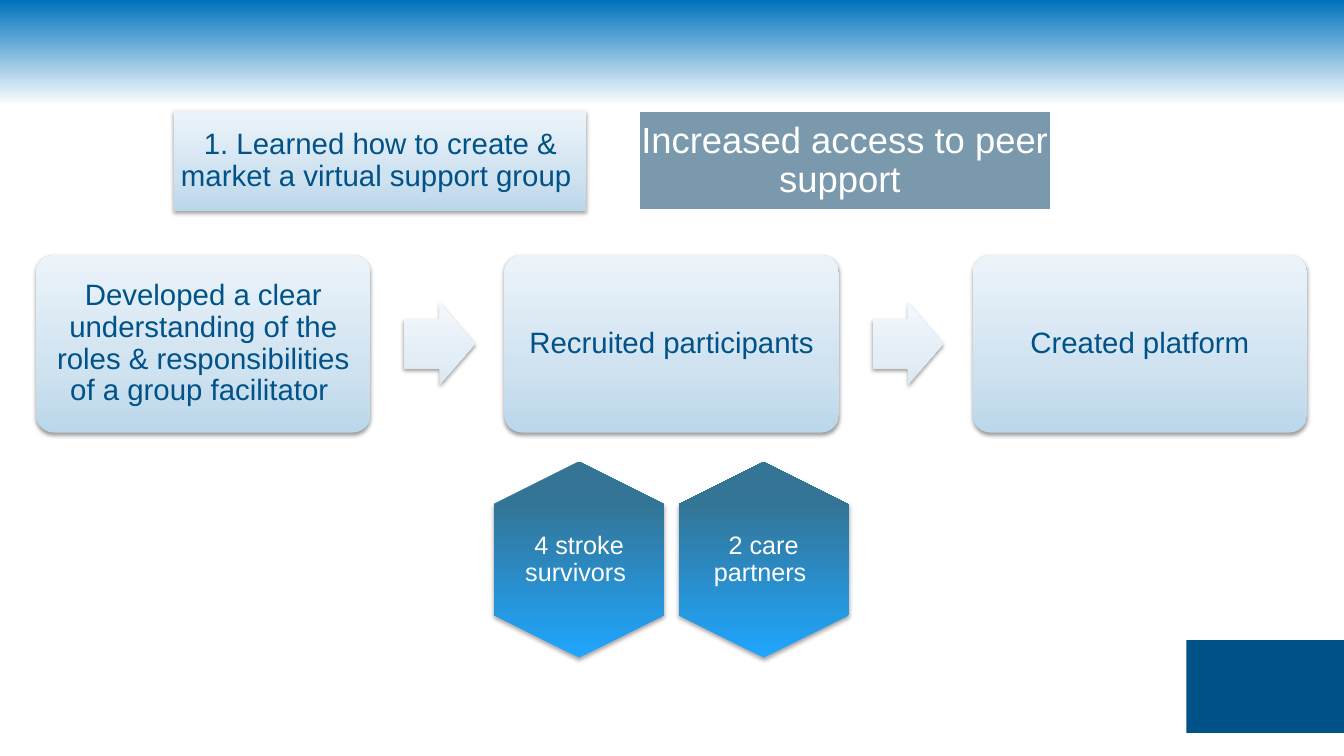
from dataclasses import dataclass

from lxml.etree import SubElement
from pptx import Presentation
from pptx.dml.color import RGBColor
from pptx.enum.shapes import MSO_SHAPE
from pptx.enum.text import MSO_ANCHOR, PP_ALIGN
from pptx.oxml.ns import qn
from pptx.util import Cm, Pt


@dataclass(frozen=True)
class Theme:
    """Colours, gradients, shadows and type sizes of the slide."""
    font: str = "Arial"
    navy: str = "005288"
    slate: str = "7A99AC"
    white: str = "FFFFFF"
    sky: tuple = ((0, "0072BC"), (14, "FFFFFF"))
    pale: tuple = ((0, "BBD7EA"), (35, "CFE2F0"), (100, "ECF4FA"))
    mist: tuple = ((0, "D9E8F2"), (35, "E4EEF6"), (100, "F4F8FC"))
    ocean: tuple = ((0, "1FA6FF"), (80, "347494"), (100, "327596"))
    heading_size: int = 26
    step_size: int = 21
    group_size: int = 18
    soft_shadow: int = 38
    hexagon_shadow: int = 35


THEME = Theme()


def paint_gradient(fill, element, stops, angle):
    """Fill with colour stops given as percent and colour."""
    fill.gradient()
    fill.gradient_angle = angle
    gradient = next(element.iter(qn("a:gradFill")))
    gradient.set("rotWithShape", "0")
    stop_list = gradient.find(qn("a:gsLst"))
    for old_stop in list(stop_list):
        stop_list.remove(old_stop)
    for percent, colour in stops:
        stop = SubElement(stop_list, qn("a:gs"), pos=str(percent * 1000))
        SubElement(stop, qn("a:srgbClr"), val=colour)


def cast_shadow(shape, opacity):
    """Drop a small shadow straight below the shape."""
    effects = shape._element.spPr.find(qn("a:effectLst"))
    shadow = SubElement(effects, qn("a:outerShdw"), blurRad=str(Pt(3.1)),
                        dist=str(Pt(1.6)), dir="5400000", rotWithShape="0")
    colour = SubElement(shadow, qn("a:srgbClr"), val="000000")
    SubElement(colour, qn("a:alpha"), val=str(opacity * 1000))


def draw(slide, preset, box, fill, shadow=None, adjustments=()):
    """Add a borderless preset shape with a solid or gradient fill."""
    shape = slide.shapes.add_shape(preset, *(Cm(length) for length in box))
    shape.shadow.inherit = False
    shape.line.fill.background()
    for index, value in enumerate(adjustments):
        shape.adjustments[index] = value
    if isinstance(fill, str):
        shape.fill.solid()
        shape.fill.fore_color.rgb = RGBColor.from_string(fill)
    else:
        paint_gradient(shape.fill, shape._element, fill, 90)
    if shadow:
        cast_shadow(shape, shadow)
    return shape


def write(shape, wording, size, colour, inset):
    """Set centred, wrapped text in a shape or text box."""
    frame = shape.text_frame
    margins = dict.fromkeys(
        ("margin_left", "margin_top", "margin_right", "margin_bottom"), Cm(inset))
    paragraph = frame.paragraphs[0]
    paragraph.text = wording
    formats = (
        (frame, {"word_wrap": True, "vertical_anchor": MSO_ANCHOR.MIDDLE, **margins}),
        (paragraph, {"alignment": PP_ALIGN.CENTER, "line_spacing": 0.9}),
        (paragraph.font, {"name": THEME.font, "size": Pt(size)}),
        (paragraph.font.color, {"rgb": RGBColor.from_string(colour)}),
    )
    for target, values in formats:
        for attribute, value in values.items():
            setattr(target, attribute, value)


def add_headings(slide, box):
    """Place the numbered lesson and its outcome side by side in the box."""
    left, top, width, height = box
    heading_width = 10.39
    lesson = draw(slide, MSO_SHAPE.RECTANGLE, (left, top, heading_width, height),
                  THEME.pale, THEME.soft_shadow)
    write(lesson, "1. Learned how to create & market a virtual support group ",
          THEME.step_size, THEME.navy, 0.03)
    outcome = draw(slide, MSO_SHAPE.RECTANGLE,
                   (left + width - heading_width, top, heading_width, height), THEME.slate)
    outcome.line.color.rgb = RGBColor.from_string(THEME.white)
    outcome.line.width = Pt(2)
    write(outcome, "Increased access to peer support ",
          THEME.heading_size, THEME.white, 0.03)


def add_steps(slide, box, steps):
    """Spread step cards over the box with an arrow in each gap."""
    left, top, width, height = box
    card_width, arrow_width, arrow_height, arrow_gap = 8.43, 1.78, 2.08, 0.85
    pitch = (width - card_width) / (len(steps) - 1)
    for index, step in enumerate(steps):
        card_left = left + index * pitch
        if index:
            draw(slide, MSO_SHAPE.RIGHT_ARROW,
                 (card_left - pitch + card_width + arrow_gap,
                  top + (height - arrow_height) / 2, arrow_width, arrow_height),
                 THEME.mist, THEME.soft_shadow, (0.6, 0.5))
        card = draw(slide, MSO_SHAPE.ROUNDED_RECTANGLE, (card_left, top, card_width, height),
                    THEME.pale, THEME.soft_shadow, (0.1,))
        write(card, step, THEME.step_size, THEME.navy, 0.36)


def add_participants(slide, box, groups):
    """Stand one upright hexagon per participant group in the box."""
    left, top, width, height = box
    hexagon_width, label_width, label_height = 4.29, 2.95, 3.4
    pitch = (width - hexagon_width) / (len(groups) - 1)
    middle = top + height / 2
    for index, group in enumerate(groups):
        centre = left + hexagon_width / 2 + index * pitch
        hexagon = draw(slide, MSO_SHAPE.HEXAGON,
                       (centre - height / 2, middle - hexagon_width / 2,
                        height, hexagon_width),
                       THEME.ocean, THEME.hexagon_shadow)
        hexagon.rotation = 90
        label = slide.shapes.add_textbox(
            Cm(centre - label_width / 2), Cm(middle - label_height / 2),
            Cm(label_width), Cm(label_height))
        write(label, group, THEME.group_size, THEME.white, 0)


def add_backdrop(slide, corner_box):
    """Paint the sky background and the navy corner block."""
    paint_gradient(slide.background.fill, slide._element, THEME.sky, 270)
    draw(slide, MSO_SHAPE.RECTANGLE, corner_box, THEME.navy)


def main():
    """Build the slide and save it."""
    deck = Presentation()
    deck.slide_width, deck.slide_height = Cm(33.87), Cm(19.05)
    slide = deck.slides.add_slide(deck.slide_layouts[6])
    add_backdrop(slide, (29.9, 16.13, 3.97, 2.34))
    add_headings(slide, (4.39, 2.8, 22.1, 2.51))
    add_participants(slide, (12.45, 11.64, 8.94, 4.93),
                     ("4 stroke survivors ", "2 care partners "))
    add_steps(slide, (0.91, 6.43, 32.03, 4.47), (
        "Developed a clear understanding of the roles & responsibilities "
        "of a group facilitator ",
        "Recruited participants",
        "Created platform",
    ))
    deck.save("out.pptx")


if __name__ == "__main__":
    main()
